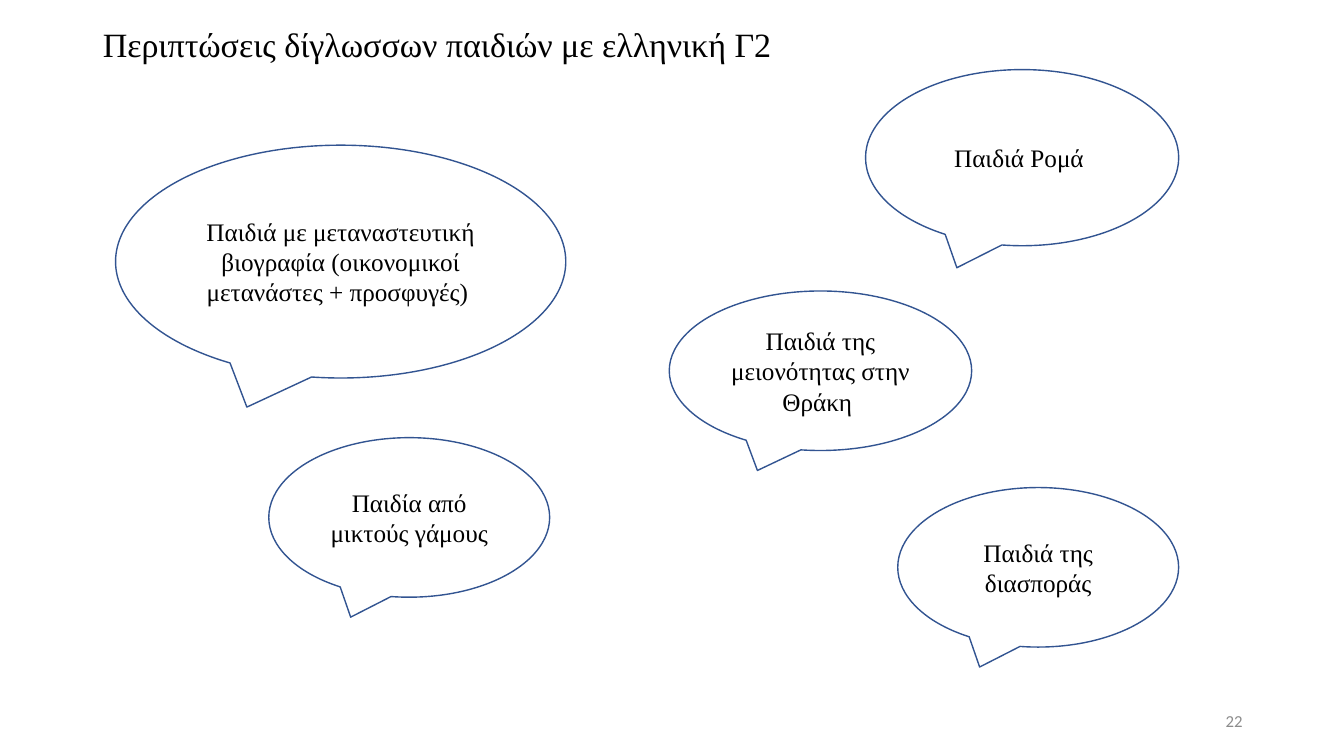
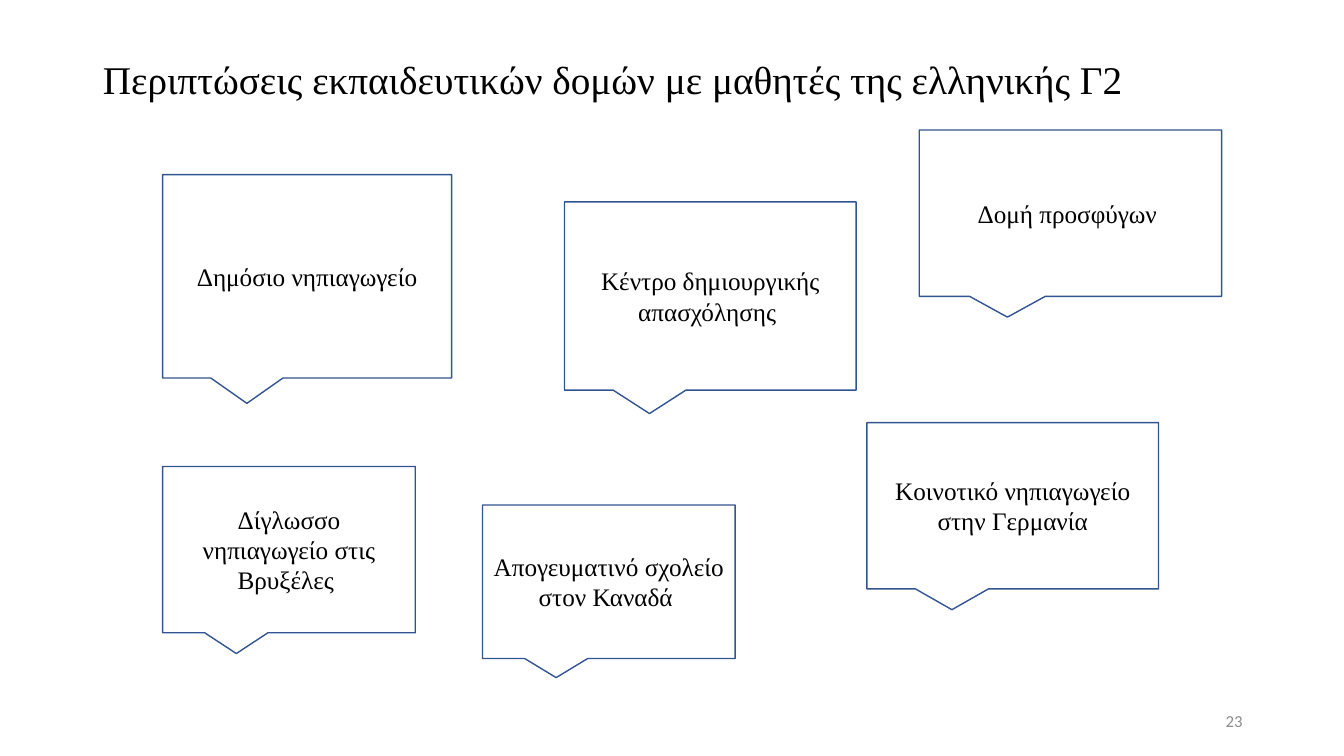
from dataclasses import dataclass

from pptx import Presentation
from pptx import util as u
from pptx.dml import color
from pptx.enum import shapes, text

HUES = {"ink": "000000", "paper": "FFFFFF", "edge": "325491", "page": "8C8C8C"}
SERIF, SANS = "Times New Roman", "Calibri"
WIDE, HIGH = u.Inches(13.33), u.Inches(7.5)
OVAL = shapes.MSO_SHAPE.OVAL_CALLOUT
RECT = shapes.MSO_SHAPE.RECTANGULAR_CALLOUT


@dataclass(frozen=True)
class Box:
    """Edges as percent of the slide's width and height."""

    left: float
    top: float
    width: float
    height: float

    def place(self) -> tuple[int, int, int, int]:
        return (
            int(WIDE * self.left / 100),
            int(HIGH * self.top / 100),
            int(WIDE * self.width / 100),
            int(HIGH * self.height / 100),
        )


@dataclass(frozen=True)
class Bubble:
    words: str
    box: Box


@dataclass(frozen=True)
class Page:
    number: int
    title: str
    size: float
    head: Box
    form: shapes.MSO_SHAPE
    bubbles: tuple[Bubble, ...]


FOOT = Box(70.7, 92.7, 22.5, 5.3)

PAGES = (
    Page(
        22, "Περιπτώσεις δίγλωσσων παιδιών με ελληνική Γ2", 24.3,
        Box(6.9, 3.2, 86.3, 6), OVAL,
        (
            Bubble("Παιδία από μικτούς γάμους", Box(20, 57.9, 20.9, 21.1)),
            Bubble("Παιδιά της διασποράς", Box(66.8, 64.5, 20.9, 21.1)),
            Bubble("Παιδιά της μειονότητας στην Θράκη ", Box(49.8, 38.5, 22.5, 21.1)),
            Bubble("Παιδιά Ρομά ", Box(64.4, 9.2, 23.3, 23.3)),
            Bubble(
                "Παιδιά με μεταναστευτική βιογραφία (οικονομικοί μετανάστες + προσφυγές) ",
                Box(8.6, 19.2, 33.5, 30.8),
            ),
        ),
    ),
    Page(
        23, "Περιπτώσεις εκπαιδευτικών δομών με μαθητές της ελληνικής Γ2", 28,
        Box(6.9, 5.3, 86.3, 11.1), RECT,
        (
            Bubble("Κέντρο δημιουργικής απασχόλησης ", Box(42, 26.7, 21.7, 24.9)),
            Bubble("Απογευματινό σχολείο στον Καναδά ", Box(35.9, 66.8, 18.8, 20.3)),
            Bubble("Δημόσιο νηπιαγωγείο", Box(12.1, 23.1, 21.5, 26.9)),
            Bubble("Δίγλωσσο νηπιαγωγείο στις Βρυξέλες ", Box(12.1, 61.7, 18.8, 22)),
            Bubble("Κοινοτικό νηπιαγωγείο στην Γερμανία", Box(64.5, 55.9, 21.7, 22)),
            Bubble("Δομή προσφύγων ", Box(68.4, 17.2, 22.5, 22)),
        ),
    ),
)


def hue(name: str) -> color.RGBColor:
    return color.RGBColor.from_string(HUES[name])


def write(shape, words: str, size: float, align: text.PP_ALIGN,
          face: str = SERIF, ink: str = "ink", pitch: float = 1.0) -> None:
    frame = shape.text_frame
    frame.word_wrap = True
    frame.auto_size = text.MSO_AUTO_SIZE.NONE
    frame.vertical_anchor = text.MSO_ANCHOR.MIDDLE
    line = frame.paragraphs[0]
    line.alignment = align
    line.line_spacing = pitch
    run = line.add_run()
    run.text = words
    run.font.name = face
    run.font.size = u.Pt(size)
    run.font.color.rgb = hue(ink)


def head(slide, page: Page) -> None:
    title = slide.shapes.title
    title.left, title.top, title.width, title.height = page.head.place()
    write(title, page.title, page.size, text.PP_ALIGN.LEFT, pitch=0.9)


def foot(slide, number: int) -> None:
    label = slide.shapes.add_textbox(*FOOT.place())
    write(label, str(number), 12, text.PP_ALIGN.RIGHT, SANS, "page")


def draw(slide, form: shapes.MSO_SHAPE, bubble: Bubble) -> None:
    shape = slide.shapes.add_shape(form, *bubble.box.place())
    shape.shadow.inherit = False
    shape.fill.solid()
    shape.fill.fore_color.rgb = hue("paper")
    shape.line.color.rgb = hue("edge")
    shape.line.width = u.Pt(1)
    write(shape, bubble.words, 18, text.PP_ALIGN.CENTER)


def main() -> None:
    deck = Presentation()
    deck.slide_width, deck.slide_height = WIDE, HIGH
    for page in PAGES:
        slide = deck.slides.add_slide(deck.slide_layouts.get_by_name("Title Only"))
        head(slide, page)
        foot(slide, page.number)
        for bubble in page.bubbles:
            draw(slide, page.form, bubble)
    deck.save("out.pptx")


if __name__ == "__main__":
    main()
